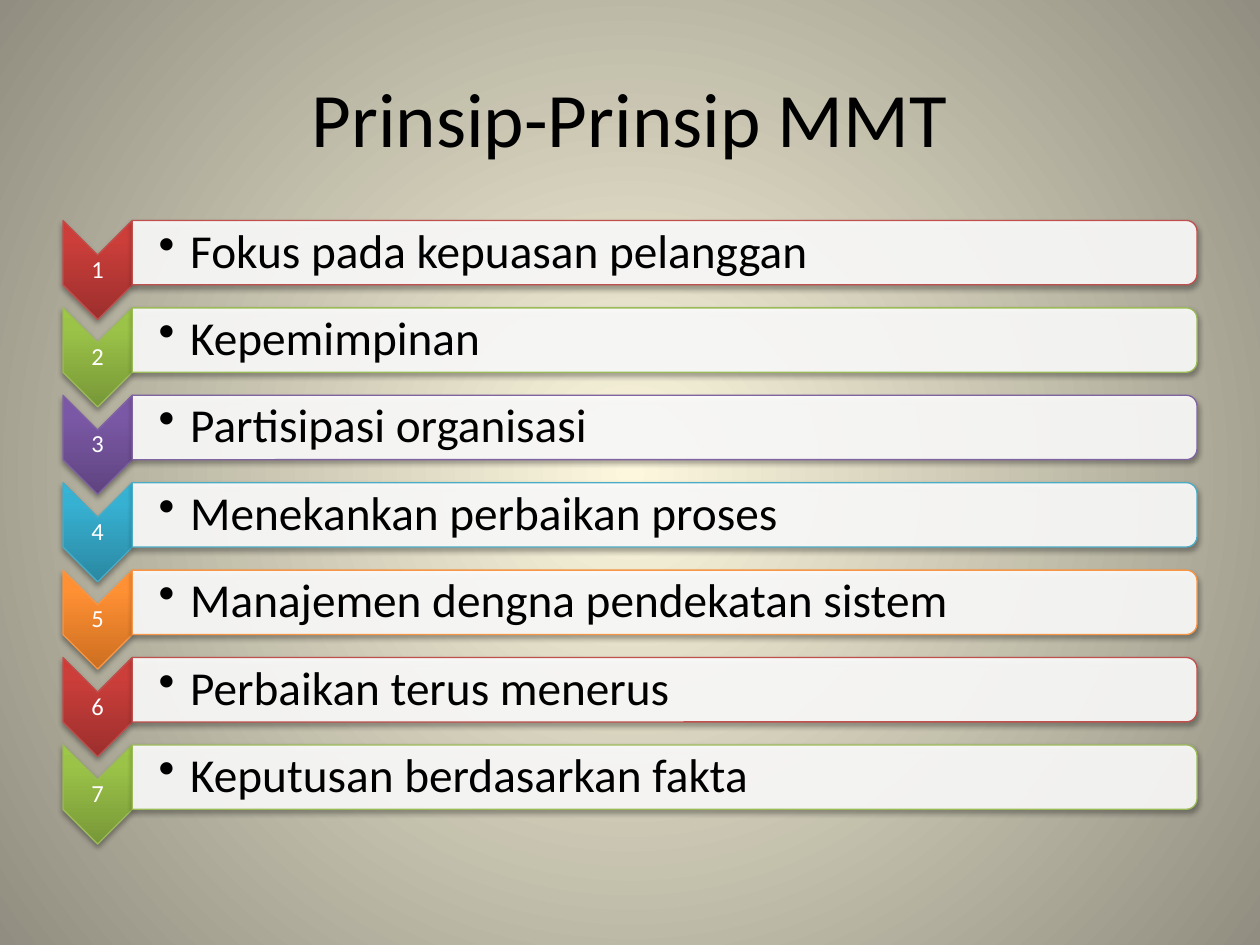
from pptx import Presentation
from pptx import util as u
from pptx.dml.color import RGBColor
from pptx.enum import shapes, text
from pptx.oxml import parse_xml
from pptx.oxml.ns import nsdecls, qn

Pt = u.Pt
rgb = RGBColor.from_string
NS = nsdecls("a")


def gradient(stops, direction):
    gs = "".join(f'<a:gs pos="{pos * 1000}"><a:srgbClr val="{c}"/></a:gs>' for pos, c in stops)
    return parse_xml(f'<a:gradFill {NS} rotWithShape="0"><a:gsLst>{gs}</a:gsLst>{direction}</a:gradFill>')


def add_text(s, x, y, w, h, words, size, color, align, insets):
    tf = s.shapes.add_textbox(Pt(x), Pt(y), Pt(w), Pt(h)).text_frame
    tf.word_wrap = True
    tf.vertical_anchor = text.MSO_ANCHOR.MIDDLE
    tf.margin_left, tf.margin_top, tf.margin_right, tf.margin_bottom = map(Pt, insets)
    p = tf.paragraphs[0]
    p.alignment = align
    r = p.add_run()
    r.text = words
    r.font.size, r.font.name = Pt(size), "Calibri"
    r.font.color.rgb = rgb(color)
    return p


prs = Presentation()
prs.slide_width, prs.slide_height = Pt(720), Pt(540)
s = prs.slides.add_slide(prs.slide_layouts[6])

# Background: radial gradient
s.background.fill.solid()
bg = s.element.find(".//" + qn("p:bgPr"))
circle = '<a:path path="circle"><a:fillToRect l="50000" t="50000" r="50000" b="50000"/></a:path>'
bg.replace(bg[0], gradient([(0, "FCF7DD"), (100, "918E81")], circle))

# Title
add_text(s, 36, 21.6, 648, 90, "Prinsip-Prinsip MMT", 44, "000000",
         text.PP_ALIGN.CENTER, (7.2, 3.6, 7.2, 3.6))

# Principles, with colours cycling: line, then gradient from dark to light
principles = ["Fokus pada kepuasan pelanggan", "Kepemimpinan", "Partisipasi organisasi",
              "Menekankan perbaikan proses", "Manajemen dengna pendekatan sistem",
              "Perbaikan terus menerus", "Keputusan berdasarkan fakta"]
palette = [("C0504D", "9C2F2D", "CB3E3A", "CE3B37"),
           ("9BBB59", "779737", "9BC348", "9DC746"),
           ("8064A2", "5F4480", "7B58A6", "7C57A8"),
           ("4BACC6", "2A88A2", "37B1D2", "34B4D6"),
           ("F79646", "CC6E20", "FF9034", "FF9136")]
pitch = 49.95

for i, principle in enumerate(principles):
    line, dark, mid, light = palette[i % len(palette)]
    y = 126 + i * pitch

    # Chevron and bar, both turned a quarter: kind, centre x, centre y, length, thickness
    for kind, cx, cy, w, h in [
            (shapes.MSO_SHAPE.CHEVRON, 55.8, y + 28.3, 56.6, 39.6),
            (shapes.MSO_SHAPE.ROUND_2_SAME_RECTANGLE, 379.8, y + 18.4, 36.8, 608.4)]:
        sp = s.shapes.add_shape(kind, Pt(cx - w / 2), Pt(cy - h / 2), Pt(w), Pt(h))
        sp.rotation = 90
        sp.fill.solid()
        sp.fill.fore_color.rgb = rgb("FFFFFF")
        sp.line.color.rgb = rgb(line)
        sp.line.width = Pt(0.75)
        sp.shadow.inherit = False
        pr = sp.element.spPr
        fill = pr.find(qn("a:solidFill"))
        if kind == shapes.MSO_SHAPE.CHEVRON:
            sp.adjustments[0] = 0.7 * 0.7143
            stops = [(0, dark), (80, mid), (100, light)]
            pr.replace(fill, gradient(stops, '<a:lin ang="16200000" scaled="0"/>'))
        else:
            fill[0].append(parse_xml(f'<a:alpha {NS} val="90000"/>'))
        pr.find(qn("a:effectLst")).append(parse_xml(
            f'<a:outerShdw {NS} blurRad="40000" dist="23000" dir="5400000" rotWithShape="0">'
            '<a:srgbClr val="000000"><a:alpha val="35000"/></a:srgbClr></a:outerShdw>'))

    # Number on the chevron
    p = add_text(s, 36, y + 19.9, 39.6, 17, str(i + 1), 14, "FFFFFF",
                 text.PP_ALIGN.CENTER, (0.7, 0.7, 0.7, 0.7))
    p.line_spacing = 0.9

    # Bulleted principle on the bar
    p = add_text(s, 75.6, y + 1.8, 606.2, 33.2, principle, 27, "000000",
                 text.PP_ALIGN.LEFT, (15.1, 1.4, 1.4, 1.4))
    p.line_spacing = 0.9
    pPr = p._p.get_or_add_pPr()
    pPr.set("marL", str(Pt(18)))
    pPr.set("indent", str(-Pt(18)))
    pPr.append(parse_xml(f'<a:buChar {NS} char="•"/>'))

prs.save("out.pptx")
